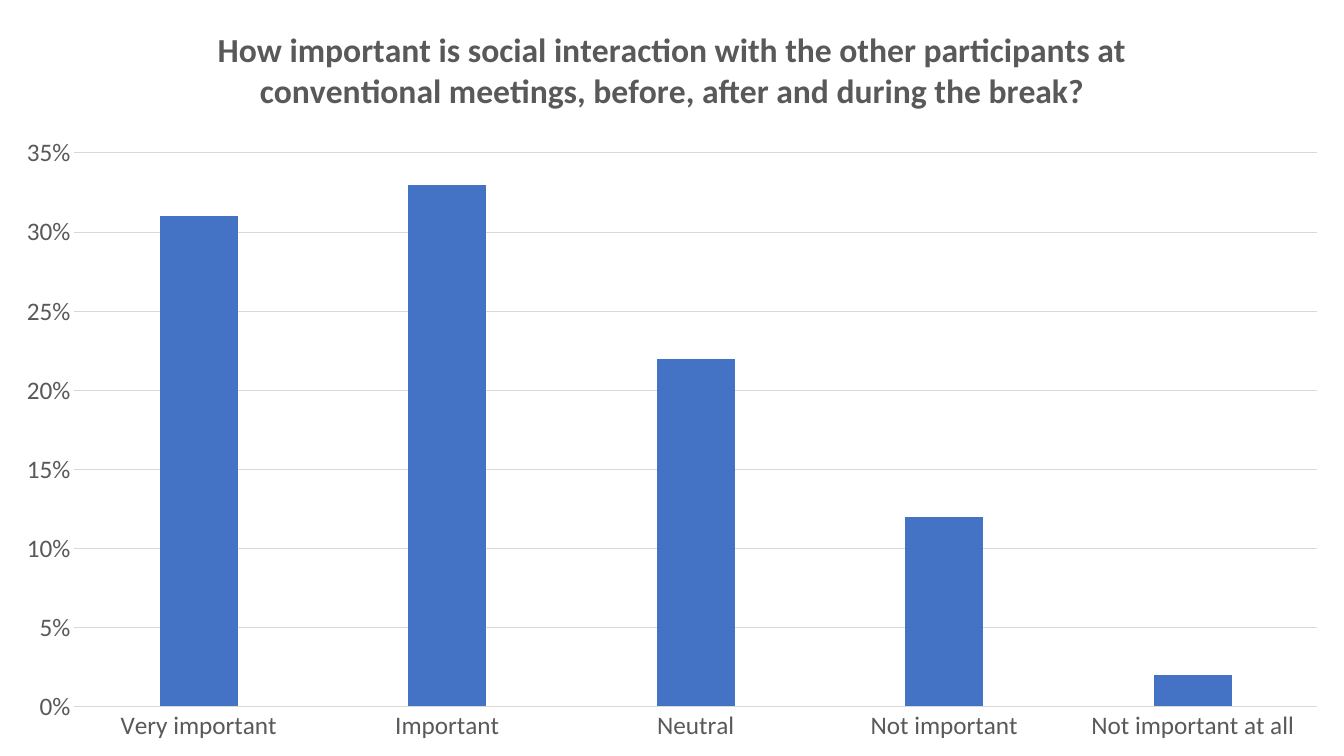
import pptx
import pptx.chart.data
import pptx.dml.color
import pptx.enum.chart
import pptx.util
from pptx.util import Inches

COLORS = {"bar": "4472C4", "text": "595959", "line": "D9D9D9"}
FONT_NAME = "Calibri"
QUESTION = (
    "How important is social interaction with the other participants at "
    "conventional meetings, before, after and during the break?"
)
ANSWERS = {
    "Very important": 0.31,
    "Important": 0.33,
    "Neutral": 0.22,
    "Not important": 0.12,
    "Not important at all": 0.02,
}


def color(name):
    return pptx.dml.color.RGBColor.from_string(COLORS[name])


def format_font(font, size, bold=False):
    font.name = FONT_NAME
    font.size = pptx.util.Pt(size)
    font.bold = bold
    font.color.rgb = color("text")


def format_line(line):
    line.color.rgb = color("line")
    line.width = pptx.util.Pt(0.75)


def format_title(chart):
    chart.has_title = True
    chart.chart_title.include_in_layout = False
    text_frame = chart.chart_title.text_frame
    text_frame.text = QUESTION
    format_font(text_frame.paragraphs[0].font, 24, bold=True)


def format_axes(chart):
    for axis in (chart.category_axis, chart.value_axis):
        axis.major_tick_mark = pptx.enum.chart.XL_TICK_MARK.NONE
        axis.minor_tick_mark = pptx.enum.chart.XL_TICK_MARK.NONE
        format_font(axis.tick_labels.font, 18)
    format_line(chart.category_axis.format.line)

    value_axis = chart.value_axis
    value_axis.minimum_scale = 0
    value_axis.maximum_scale = 0.35
    value_axis.major_unit = 0.05
    value_axis.format.line.fill.background()
    value_axis.has_major_gridlines = True
    format_line(value_axis.major_gridlines.format.line)
    value_axis.tick_labels.number_format = "0%"
    value_axis.tick_labels.number_format_is_linked = False


def format_columns(chart):
    plot = chart.plots[0]
    plot.gap_width = 219
    plot.overlap = -27
    plot.vary_by_categories = False
    fill = plot.series[0].format.fill
    fill.solid()
    fill.fore_color.rgb = color("bar")


def add_answer_chart(slide, left, top, width, height):
    data = pptx.chart.data.CategoryChartData(number_format="0%")
    data.categories = list(ANSWERS)
    data.add_series(QUESTION, list(ANSWERS.values()))
    chart = slide.shapes.add_chart(
        pptx.enum.chart.XL_CHART_TYPE.COLUMN_CLUSTERED,
        left, top, width, height, data,
    ).chart
    chart.has_legend = False
    chart.font.name = FONT_NAME
    format_title(chart)
    format_axes(chart)
    format_columns(chart)


def main():
    presentation = pptx.Presentation()
    presentation.slide_width = Inches(13.33)
    presentation.slide_height = Inches(7.5)
    blank_layout = presentation.slide_layouts[6]
    slide = presentation.slides.add_slide(blank_layout)
    add_answer_chart(
        slide, 0, 0, presentation.slide_width, presentation.slide_height
    )
    presentation.save("out.pptx")


if __name__ == "__main__":
    main()
